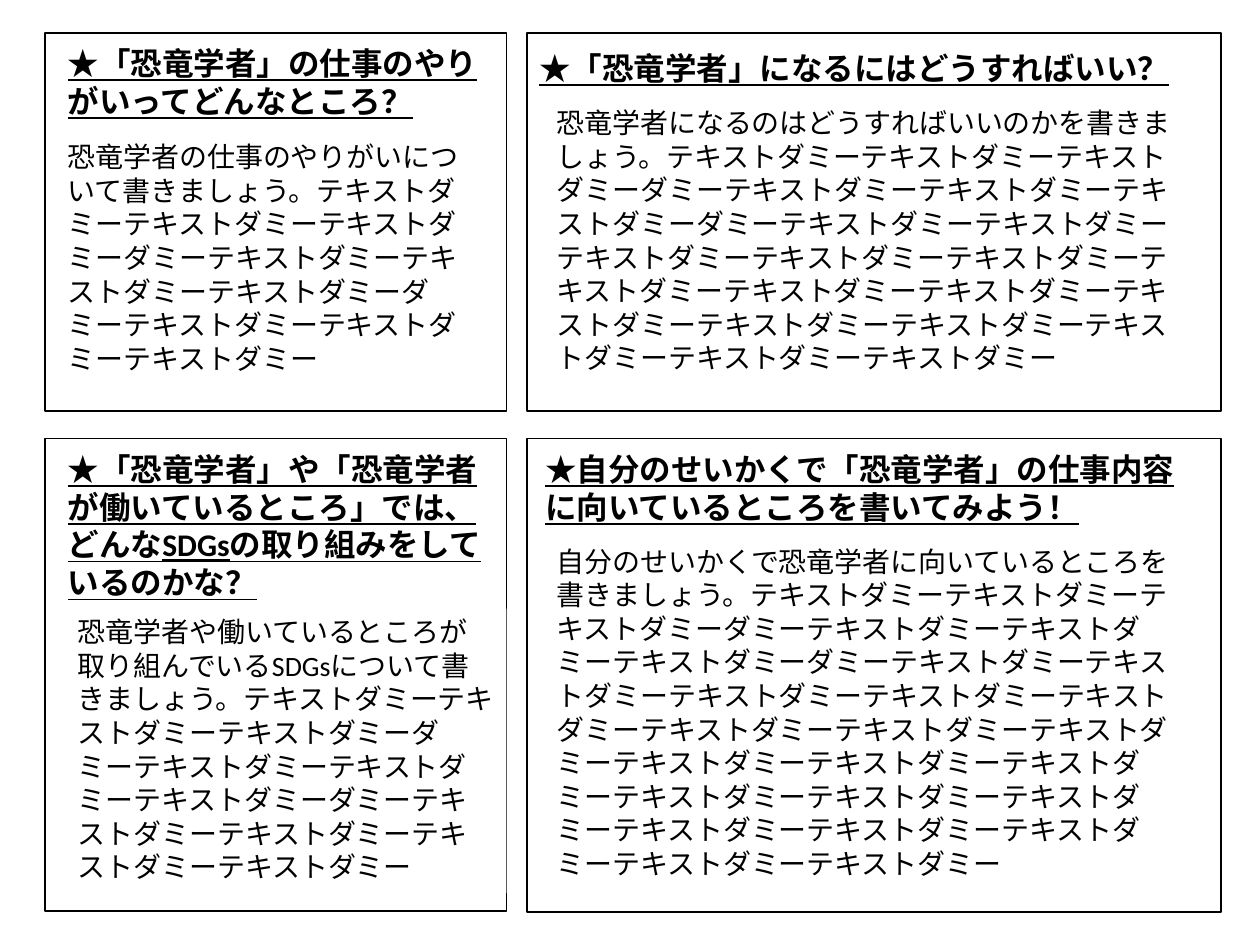
"""Build the four-panel worksheet about becoming a dinosaur scholar."""
from dataclasses import dataclass

import pptx
import pptx.dml.color
import pptx.enum.shapes
import pptx.enum.text
import pptx.util

PX = 9144
INK = "000000"
PAPER = "FFFFFF"
FONT = "Calibri"
DUMMY = "テキストダミー"
SHORT = "ダミー"


@dataclass
class Box:
    """Hold a place on the slide in px."""
    left: int
    top: int
    width: int
    height: int

    def emu(self) -> tuple:
        """Return the place in EMU."""
        return tuple(n * PX for n in (self.left, self.top, self.width, self.height))


@dataclass
class Panel:
    """Hold one framed panel with its heading and body."""
    frame: Box
    head: Box
    title: str
    body: Box
    intro: str
    count: int

    def words(self) -> str:
        """Return the intro followed by the filler words."""
        start = (DUMMY * 3 + SHORT) * 2
        return self.intro + start + DUMMY * self.count


PANELS = [
    Panel(Box(36, 26, 366, 300), Box(44, 30, 366, 71),
          "★「恐竜学者」の仕事のやりがいってどんなところ？",
          Box(44, 106, 350, 199),
          "恐竜学者の仕事のやりがいについて書きましょう。", 3),
    Panel(Box(418, 26, 551, 300), Box(418, 34, 593, 40),
          "★「恐竜学者」になるにはどうすればいい？",
          Box(432, 79, 516, 226),
          "恐竜学者になるのはどうすればいいのかを書きましょう。", 14),
    Panel(Box(36, 348, 366, 375), Box(44, 352, 366, 131),
          "★「恐竜学者」や「恐竜学者が働いているところ」では、"
          "どんなSDGsの取り組みをしているのかな？",
          Box(52, 483, 350, 226),
          "恐竜学者や働いているところが取り組んでいるSDGsについて書きましょう。", 4),
    Panel(Box(418, 348, 551, 376), Box(423, 352, 530, 71),
          "★自分のせいかくで「恐竜学者」の仕事内容に向いているところを書いてみよう！",
          Box(432, 427, 516, 279),
          "自分のせいかくで恐竜学者に向いているところを書きましょう。", 19),
]


def paint(code: str) -> pptx.dml.color.RGBColor:
    """Turn a hex string into a colour."""
    return pptx.dml.color.RGBColor.from_string(code)


def write(shape, text: str, size: int, strong: bool = False) -> None:
    """Put formatted, left-aligned text into a shape."""
    frame = shape.text_frame
    frame.text = text
    frame.word_wrap = True
    frame.auto_size = pptx.enum.text.MSO_AUTO_SIZE.SHAPE_TO_FIT_TEXT
    frame.vertical_anchor = pptx.enum.text.MSO_ANCHOR.TOP
    line = frame.paragraphs[0]
    line.alignment = pptx.enum.text.PP_ALIGN.LEFT
    font = line.runs[0].font
    font.name = FONT
    font.size = pptx.util.Pt(size)
    font.color.rgb = paint(INK)
    if strong:
        font.bold = font.underline = True


def add_rect(slide, box: Box):
    """Add a plain rectangle without a shadow."""
    kind = pptx.enum.shapes.MSO_SHAPE.RECTANGLE
    shape = slide.shapes.add_shape(kind, *box.emu())
    shape.shadow.inherit = False
    return shape


def draw_frame(slide, panel: Panel) -> None:
    """Draw the outline of a panel."""
    shape = add_rect(slide, panel.frame)
    shape.fill.background()
    shape.line.color.rgb = paint(INK)
    shape.line.width = pptx.util.Pt(1)


def draw_head(slide, panel: Panel) -> None:
    """Draw the heading of a panel."""
    shape = slide.shapes.add_textbox(*panel.head.emu())
    write(shape, panel.title, 18, True)


def draw_body(slide, panel: Panel) -> None:
    """Draw the white body of a panel."""
    shape = add_rect(slide, panel.body)
    shape.fill.solid()
    shape.fill.fore_color.rgb = paint(PAPER)
    shape.line.fill.background()
    write(shape, panel.words(), 16)


def main() -> None:
    """Build and save the slide."""
    deck = pptx.Presentation()
    deck.slide_width = 1000 * PX
    deck.slide_height = 750 * PX
    slide = deck.slides.add_slide(deck.slide_layouts[6])
    for draw in (draw_frame, draw_head, draw_body):
        for panel in PANELS:
            draw(slide, panel)
    deck.save("out.pptx")


if __name__ == "__main__":
    main()
